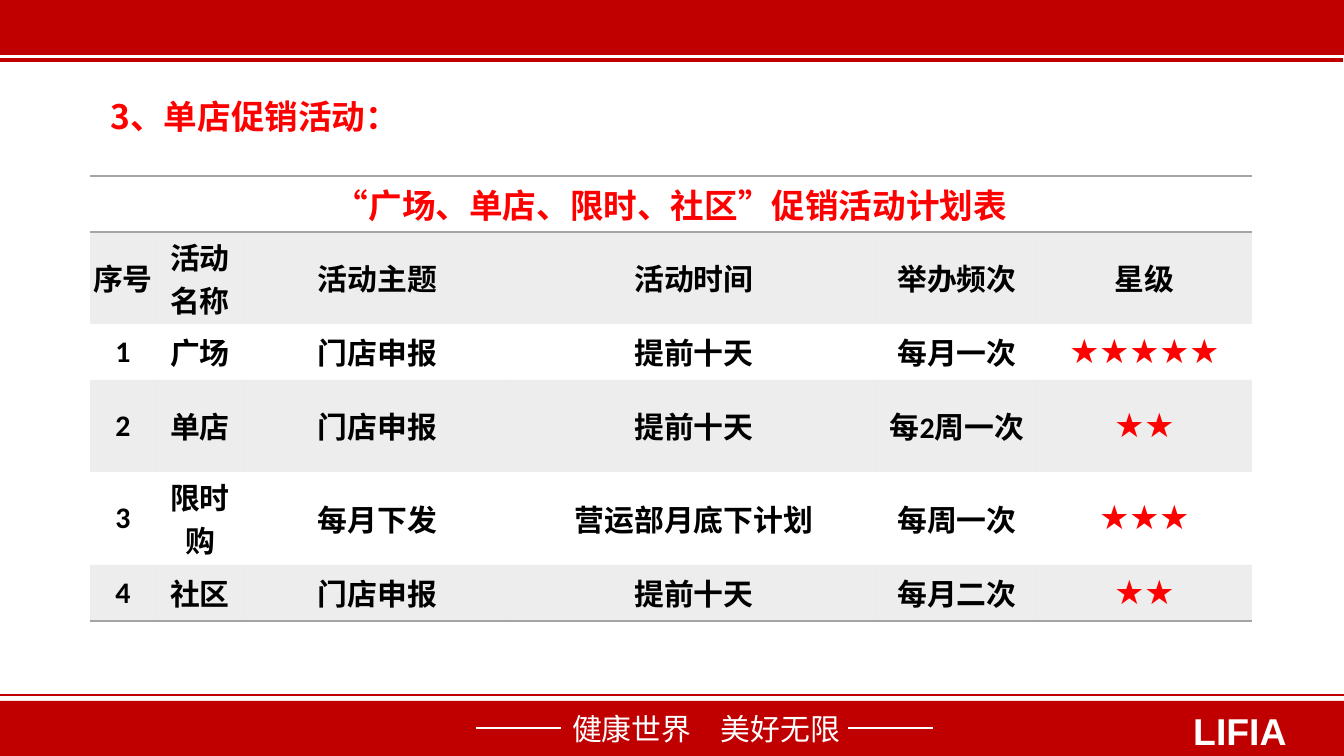
"""Build the store promotion plan slide with its banner, table and footer."""
from lxml import etree
from pptx import Presentation
from pptx.dml.color import RGBColor
from pptx.enum.shapes import MSO_CONNECTOR, MSO_SHAPE
from pptx.enum.text import MSO_ANCHOR, MSO_AUTO_SIZE, PP_ALIGN
from pptx.oxml.ns import qn
from pptx.util import Pt

PX = 914400 / 134.4
LINE, RECT = MSO_CONNECTOR.STRAIGHT, MSO_SHAPE.RECTANGLE
TOP, MIDDLE = MSO_ANCHOR.TOP, MSO_ANCHOR.MIDDLE
LEFT, CENTER = PP_ALIGN.LEFT, PP_ALIGN.CENTER
FIXED, GROW = MSO_AUTO_SIZE.NONE, MSO_AUTO_SIZE.SHAPE_TO_FIT_TEXT
NO_STYLE = "{2D5ABB26-0587-4C30-8999-92F81FD0307C}"
CJK = "Noto Sans CJK SC"
COLORS = {"banner": "C00000", "red": "FF0000", "white": "FFFFFF",
          "black": "000000", "gray": "A5A5A5"}


def px(*values):
    return [round(v * PX) for v in values]


def write(tf, text, size, color, font=CJK, bold=True, align=LEFT):
    p = tf.paragraphs[0]
    p.alignment = align
    r = p.add_run()
    r.text = text
    for name, value in {"size": Pt(size), "bold": bold, "name": font}.items():
        setattr(r.font, name, value)
    r.font.color.rgb = RGBColor.from_string(COLORS[color])
    ea = etree.SubElement(r.font._element, qn("a:ea"))
    ea.set("typeface", CJK)
    return p


prs = Presentation()
prs.slide_width, prs.slide_height = px(1344, 756)
s = prs.slides.add_slide(prs.slide_layouts[5])

for top in (0, 701):
    sp = s.shapes.add_shape(RECT, *px(0, top, 1344, 55))
    sp.shadow.inherit = False
    sp.fill.solid()
    sp.fill.fore_color.rgb = RGBColor.from_string(COLORS["banner"])
    sp.line.fill.background()

rules = [(0, 1343, 60, "banner", 2.25), (0, 1344, 695, "banner", 1),
         (476, 561, 728, "white", 1), (848, 933, 728, "white", 1)]
for x1, x2, y, color, width in rules:
    sp = s.shapes.add_connector(LINE, *px(x1, y, x2, y))
    sp.line.color.rgb = RGBColor.from_string(COLORS[color])
    sp.line.width = Pt(width)
    etree.SubElement(sp.element.spPr, qn("a:effectLst"))

footers = [((559, 704, 296, 50), "健康世界　美好无限", 16, CJK, False),
           ((1180, 702, 130, 59), "LIFIA", 20, "Arial", True)]
for box, text, size, font, bold in footers:
    tf = s.shapes.add_textbox(*px(*box)).text_frame
    tf.word_wrap = False
    tf.auto_size = GROW
    write(tf, text, size, "white", font, bold)

title = s.shapes.title
title.left, title.top, title.width, title.height = px(97, 69, 1130, 74)
tf = title.text_frame
tf.vertical_anchor = TOP
tf.auto_size = FIXED
write(tf, "3、单店促销活动：", 18, "red").line_spacing = 1.5

rows = [
    ["“广场、单店、限时、社区”促销活动计划表", "", "", "", "", ""],
    ["序号", "活动名称", "活动主题", "活动时间", "举办频次", "星级"],
    ["1", "广场", "门店申报", "提前十天", "每月一次", "★" * 5],
    ["2", "单店", "门店申报", "提前十天", "每2周一次", "★" * 2],
    ["3", "限时购", "每月下发", "营运部月底下计划", "每周一次", "★" * 3],
    ["4", "社区", "门店申报", "提前十天", "每月二次", "★" * 2],
]
widths = [66, 88, 267, 366, 160, 215]
heights = [56, 92, 56, 92, 93, 56]
borders = {0: ("a:lnT", "a:lnB"), 5: ("a:lnB",)}
margins = ("margin_left", "margin_right", "margin_top", "margin_bottom")

frame = s.shapes.add_table(len(rows), len(widths),
                           *px(90, 176, sum(widths), sum(heights)))
next(frame.element.iter(qn("a:tableStyleId"))).text = NO_STYLE
table = frame.table
table.first_row = table.horz_banding = False
for column, width in zip(table.columns, px(*widths)):
    column.width = width
for row, height in zip(table.rows, px(*heights)):
    row.height = height
table.cell(0, 0).merge(table.cell(0, len(widths) - 1))

for i, row in enumerate(rows):
    for j, text in enumerate(row):
        cell = table.cell(i, j)
        for margin in margins:
            setattr(cell, margin, 0)
        cell.vertical_anchor = MIDDLE
        if text:
            accent = i == 0 or text.startswith("★")
            size, color = (18, "red") if accent else (16, "black")
            write(cell.text_frame, text, size, color, "Calibri", align=CENTER)
        tcPr = cell._tc.get_or_add_tcPr()
        if i % 2:
            cell.fill.solid()
            cell.fill.fore_color.rgb = RGBColor.from_string(COLORS["gray"])
            shade = next(tcPr.iter(qn("a:srgbClr")))
            etree.SubElement(shade, qn("a:alpha")).set("val", "20000")
        else:
            cell.fill.background()
        for k, side in enumerate(borders.get(i, ())):
            ln = etree.Element(qn(side), w=str(Pt(1)))
            fill = etree.SubElement(ln, qn("a:solidFill"))
            etree.SubElement(fill, qn("a:srgbClr")).set("val", COLORS["gray"])
            tcPr.insert(k, ln)

prs.save("out.pptx")
